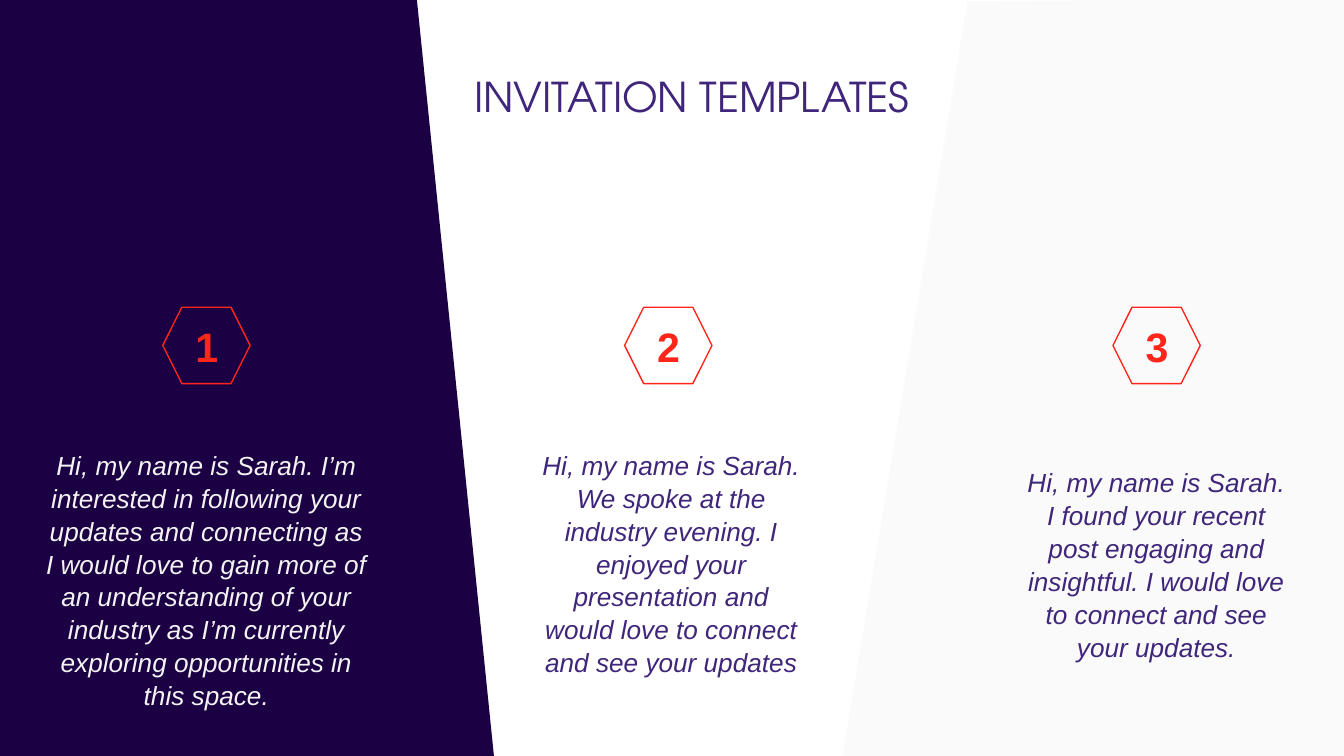
from pptx import Presentation
from pptx.dml.color import RGBColor
from pptx.enum import shapes, text
from pptx.util import Pt

INDIGO = RGBColor(0x1B, 0x00, 0x43)
PURPLE = RGBColor(0x3F, 0x26, 0x7B)
RED = RGBColor(0xFF, 0x25, 0x1B)
PALE = RGBColor(0xFA, 0xFA, 0xFA)
LIGHT = RGBColor(0xF3, 0xF3, 0xF3)

LEFT_PANEL = [(223.2, -1.4), (265, 409), (-2.9, 409), (-2.9, -0.7)]
RIGHT_PANEL = [(518.4, 0.7), (451.4, 405.4), (727.9, 405.4),
               (749.5, 348.5), (728.6, -0.7)]

# number, hexagon left, text left, text top, text width, colour, message
INVITATIONS = [
    ("1", 87.2, 17.3, 232.6, 186.5, LIGHT,
     "Hi, my name is Sarah. I’m interested in following your updates and "
     "connecting as I would love to gain more of an understanding of your "
     "industry as I’m currently exploring opportunities in this space."),
    ("2", 334.6, 281.5, 232.6, 156.2, PURPLE,
     "Hi, my name is Sarah. We spoke at the industry evening. I enjoyed your "
     "presentation and would love to connect and see your updates"),
    ("3", 596.2, 541.4, 241.9, 156.2, PURPLE,
     "Hi, my name is Sarah. I found your recent post engaging and insightful. "
     "I would love to connect and see your updates."),
]


class Painter:
    """Holds the text style and the current slide."""

    font = "Arial"
    inset = Pt(7.2)

    def __init__(self, page):
        self.page = page

    def panel(self, points, color):
        corners = [(Pt(x), Pt(y)) for x, y in points]
        builder = self.page.shapes.build_freeform(*corners[0], scale=1.0)
        builder.add_line_segments(corners[1:], close=True)
        shape = builder.convert_to_shape()
        shape.shadow.inherit = False
        shape.fill.solid()
        shape.fill.fore_color.rgb = color
        shape.line.fill.background()

    def hexagon(self, left, top, width, height):
        shape = self.page.shapes.add_shape(
            shapes.MSO_SHAPE.HEXAGON, Pt(left), Pt(top), Pt(width), Pt(height))
        shape.shadow.inherit = False
        shape.fill.background()
        shape.line.color.rgb = RED
        shape.line.width = Pt(0.75)

    def label(self, words, left, top, width, height, *, size, color, font=None,
              bold=False, italic=False, align=text.PP_ALIGN.CENTER, spacing=1.0):
        box = self.page.shapes.add_textbox(Pt(left), Pt(top), Pt(width), Pt(height))
        frame = box.text_frame
        frame.word_wrap = True
        frame.vertical_anchor = text.MSO_ANCHOR.TOP
        frame.margin_left = frame.margin_right = self.inset
        frame.margin_top = frame.margin_bottom = self.inset
        para = frame.paragraphs[0]
        para.alignment = align
        para.line_spacing = spacing
        span = para.add_run()
        span.text = words
        span.font.name = font or self.font
        span.font.size = Pt(size)
        span.font.bold = bold
        span.font.italic = italic
        span.font.color.rgb = color


def main():
    deck = Presentation()
    deck.slide_width, deck.slide_height = Pt(720), Pt(405)
    painter = Painter(deck.slides.add_slide(deck.slide_layouts[6]))

    painter.panel(LEFT_PANEL, INDIGO)
    painter.panel(RIGHT_PANEL, PALE)
    painter.label("INVITATION TEMPLATES", 210.2, 31, 321.1, 54,
                  size=22, color=PURPLE, font="TeX Gyre Adventor")

    for number, hexagon_left, left, top, width, color, message in INVITATIONS:
        painter.hexagon(hexagon_left, 164.6, 46.8, 41)
        painter.label(number, hexagon_left + 10.4, 164.9, 22.3, 24.5, size=22,
                      color=RED, bold=True, align=text.PP_ALIGN.LEFT)
        painter.label(message, left, top, width, 162, size=14, color=color,
                      italic=True, spacing=1.05)

    deck.save("out.pptx")


if __name__ == "__main__":
    main()
